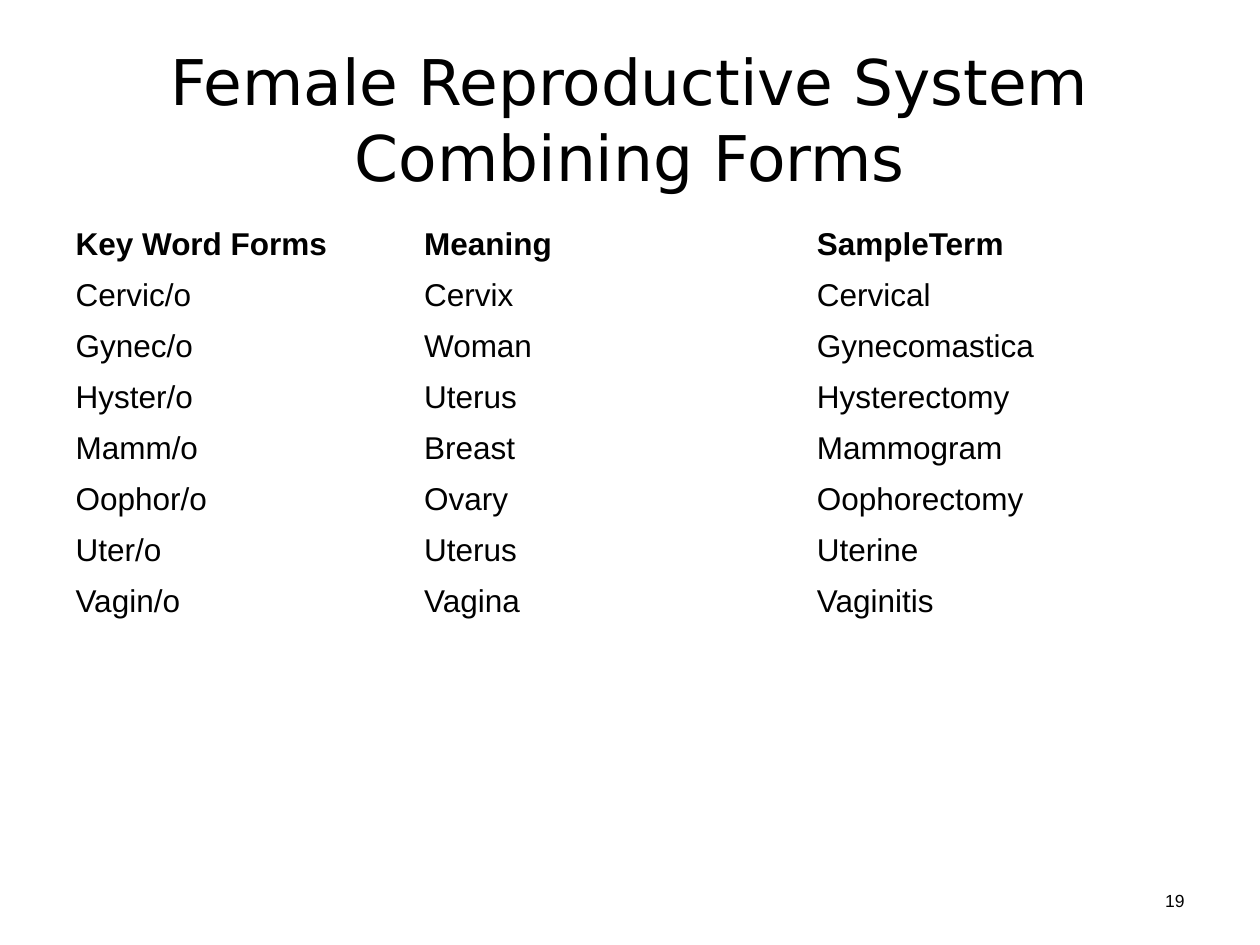
import dataclasses

import pptx
import pptx.dml.color
import pptx.enum.text
import pptx.util

ALIGN = pptx.enum.text.PP_ALIGN
WIDE, HIGH = pptx.util.Inches(10), pptx.util.Inches(7.5)


@dataclasses.dataclass(frozen=True)
class Theme:
    """Colours, fonts and type sizes of the slide."""
    ink: str = "000000"
    paper: str = "FFFFFF"
    head: str = "DejaVu Sans"
    body: str = "Arial"
    large: int = 36
    base: int = 18
    small: int = 10


THEME = Theme()
TERMS = [
    ("Key Word Forms", "Meaning", "SampleTerm"),
    ("Cervic/o", "Cervix", "Cervical"),
    ("Gynec/o", "Woman", "Gynecomastica"),
    ("Hyster/o", "Uterus", "Hysterectomy"),
    ("Mamm/o", "Breast", "Mammogram"),
    ("Oophor/o", "Ovary", "Oophorectomy"),
    ("Uter/o", "Uterus", "Uterine"),
    ("Vagin/o", "Vagina", "Vaginitis"),
]


def area(left, top, wide, high):
    """Turn shares of the slide into a box of lengths."""
    return int(left * WIDE), int(top * HIGH), int(wide * WIDE), int(high * HIGH)


def style(frame, face, size, bold=False):
    """Format every run of a text frame."""
    for para in frame.paragraphs:
        for run in para.runs:
            run.font.name = face
            run.font.size = pptx.util.Pt(size)
            run.font.bold = bold
            run.font.color.rgb = pptx.dml.color.RGBColor.from_string(THEME.ink)


def label(slide, box, text, face, size, align):
    """Place one text paragraph, centred vertically in its box."""
    frame = slide.shapes.add_textbox(*box).text_frame
    frame.word_wrap = True
    frame.vertical_anchor = pptx.enum.text.MSO_ANCHOR.MIDDLE
    para = frame.paragraphs[0]
    para.text = text
    para.alignment = align
    style(frame, face, size)


def grid(slide, box, rows, parts):
    """Place a plain table whose columns share the box by parts."""
    table = slide.shapes.add_table(len(rows), len(parts), *box).table
    table.first_row = table.horz_banding = False
    for col, part in zip(table.columns, parts):
        col.width = int(box[2] * part / sum(parts))
    for y, row in enumerate(rows):
        table.rows[y].height = box[3] // len(rows)
        for x, text in enumerate(row):
            cell = table.cell(y, x)
            cell.fill.background()
            cell.text_frame.text = text
            style(cell.text_frame, THEME.body, THEME.base, bold=y == 0)


def main():
    """Build and save the slide."""
    deck = pptx.Presentation()
    deck.slide_width, deck.slide_height = WIDE, HIGH
    slide = deck.slides.add_slide(deck.slide_layouts[6])
    fill = slide.background.fill
    fill.solid()
    fill.fore_color.rgb = pptx.dml.color.RGBColor.from_string(THEME.paper)
    label(slide, area(0.05, 0.04, 0.9, 0.17),
          "Female Reproductive System\vCombining Forms",
          THEME.head, THEME.large, ALIGN.CENTER)
    grid(slide, area(0.05, 0.233, 0.9, 0.432), TERMS, (2.77, 3.12, 3.12))
    label(slide, area(0.894, 0.913, 0.056, 0.08), "19",
          THEME.body, THEME.small, ALIGN.RIGHT)
    deck.save("out.pptx")


if __name__ == "__main__":
    main()
